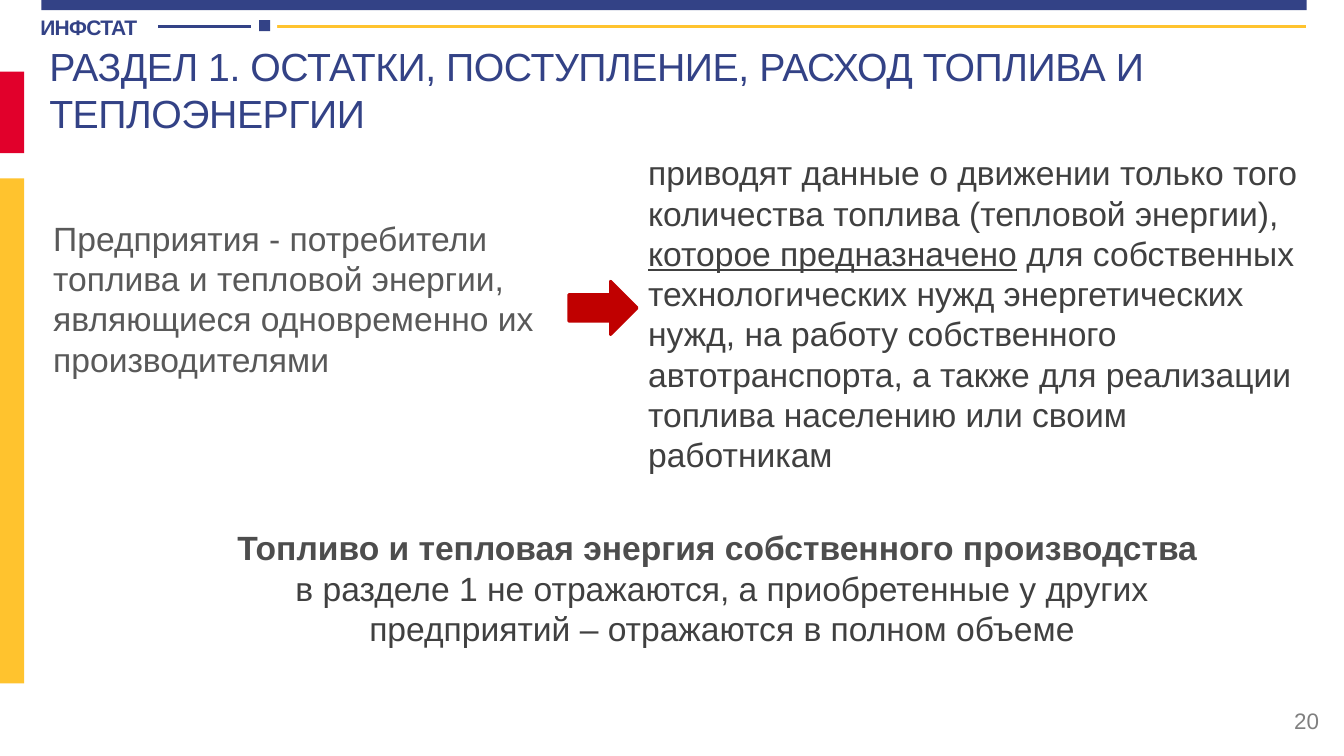
from lxml.etree import SubElement
from pptx import Presentation
from pptx.dml.color import RGBColor
from pptx.enum.shapes import MSO_CONNECTOR, MSO_SHAPE
from pptx.enum.text import MSO_ANCHOR, PP_ALIGN
from pptx.oxml.ns import qn
from pptx.util import Inches, Pt

COLORS = {
    "navy": "334286", "red": "E1002B", "gold": "FFC32E", "white": "FFFFFF",
    "arrow": "C00000", "page": "808080", "left": "595959",
    "body": "404040", "strong": "4D4D4D",
}


class Deck:
    """Holds the style and the current slide."""
    face = "Arial"

    def __init__(self):
        self.file = Presentation()
        self.file.slide_width = Inches(13.33)
        self.file.slide_height = Inches(7.5)
        self.slide = self.file.slides.add_slide(self.file.slide_layouts[6])

    def tint(self, name):
        return RGBColor.from_string(COLORS[name])

    def shape(self, box, color, kind=MSO_SHAPE.RECTANGLE, edge=0):
        item = self.slide.shapes.add_shape(kind, *map(Inches, box))
        item.shadow.inherit = False
        item.fill.solid()
        item.fill.fore_color.rgb = self.tint(color)
        if edge:
            item.line.color.rgb = self.tint(color)
            item.line.width = Pt(edge)
        else:
            item.line.fill.background()

    def rule(self, start, end, top, color):
        line = self.slide.shapes.add_connector(
            MSO_CONNECTOR.STRAIGHT, *map(Inches, (start, top, end, top)))
        line.line.color.rgb = self.tint(color)
        line.line.width = Pt(2)
        SubElement(line._element.spPr, qn("a:effectLst"))

    def text(self, box, paras, size=24, align=PP_ALIGN.LEFT, space=0,
             anchor=MSO_ANCHOR.TOP, inset=True):
        """Each paragraph is (color, bold, runs); each run is (words, underline)."""
        frame = self.slide.shapes.add_textbox(*map(Inches, box)).text_frame
        frame.word_wrap = True
        frame.vertical_anchor = anchor
        if not inset:
            frame.margin_left = frame.margin_right = 0
            frame.margin_top = frame.margin_bottom = 0
        for i, (color, bold, runs) in enumerate(paras):
            para = frame.add_paragraph() if i else frame.paragraphs[0]
            para.alignment = align
            font = para.font
            font.name, font.size, font.bold = self.face, Pt(size), bold
            font.color.rgb = self.tint(color)
            for words, under in runs:
                run = para.add_run()
                run.text = words
                if under:
                    run.font.underline = True
                if space:
                    run._r.get_or_add_rPr().set("spc", str(int(space * 100)))

    def save(self):
        self.file.save("out.pptx")


def main():
    deck = Deck()

    # Frame bars
    deck.shape((0.41, 0, 12.55, 0.1), "navy")
    deck.shape((0, 0.71, 0.24, 0.81), "red")
    deck.shape((0, 1.77, 0.24, 5.01), "gold")

    # Header label and rules
    deck.text((0.4, 0.14, 1.15, 0.27), [("navy", True, [("ИНФСТАТ", False)])],
              size=15, space=-0.5, inset=False)
    deck.rule(1.57, 2.69, 0.26, "navy")
    deck.rule(2.69, 12.95, 0.26, "gold")
    deck.shape((2.49, 0.2, 0.26, 0.11), "white")
    deck.shape((2.57, 0.2, 0.11, 0.11), "navy")

    # Title
    title = "РАЗДЕЛ 1. ОСТАТКИ, ПОСТУПЛЕНИЕ, РАСХОД ТОПЛИВА И ТЕПЛОЭНЕРГИИ"
    deck.text((0.39, 0.37, 12.39, 1.04), [("navy", False, [(title, False)])],
              size=28, space=-0.3)

    # Who reports, and what
    deck.text((0.43, 2.11, 5.56, 1.72), [("left", False, [
        ("Предприятия - потребители топлива и тепловой энергии, "
         "являющиеся одновременно их производителями", False)])])
    deck.text((6.33, 1.46, 6.66, 3.33), [("body", False, [
        ("приводят данные о движении только того количества топлива "
         "(тепловой энергии), ", False),
        ("которое предназначено", True),
        (" для собственных технологических нужд энергетических нужд, "
         "на работу собственного автотранспорта, а также для реализации "
         "топлива населению или своим работникам", False)])])
    deck.shape((5.64, 2.79, 0.68, 0.53), "arrow", MSO_SHAPE.RIGHT_ARROW, edge=2)

    # Closing note
    deck.text((2.12, 5.18, 10.08, 1.31), [
        ("strong", True,
         [("Топливо и тепловая энергия собственного производства ", False)]),
        ("body", False,
         [("в разделе 1 не отражаются, а приобретенные у других "
           "предприятий – отражаются в полном объеме", False)]),
    ], align=PP_ALIGN.CENTER)

    # Page number
    deck.text((10.18, 6.95, 3, 0.4), [("page", False, [("20", False)])],
              size=16, align=PP_ALIGN.RIGHT, anchor=MSO_ANCHOR.MIDDLE)

    deck.save()


if __name__ == "__main__":
    main()
